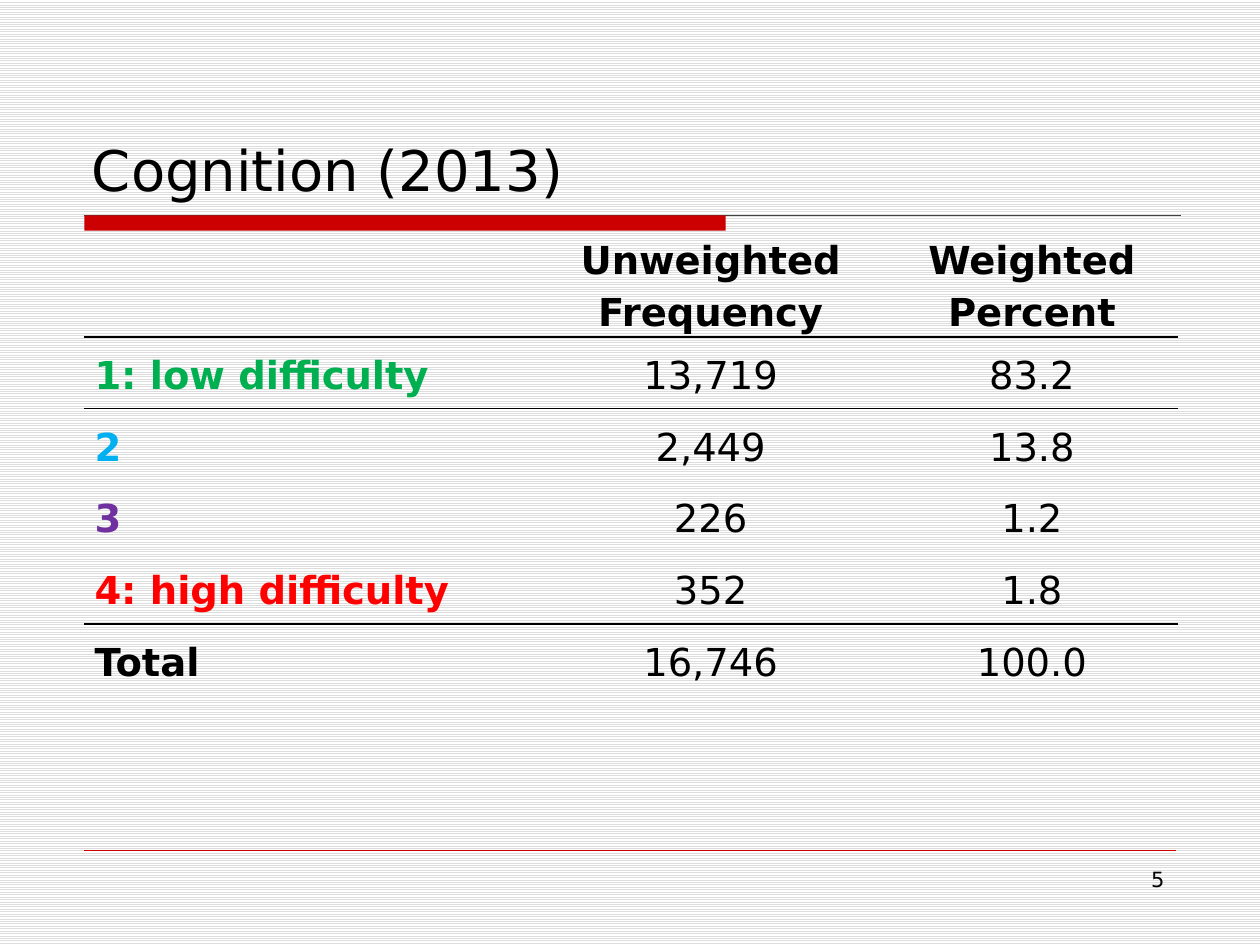
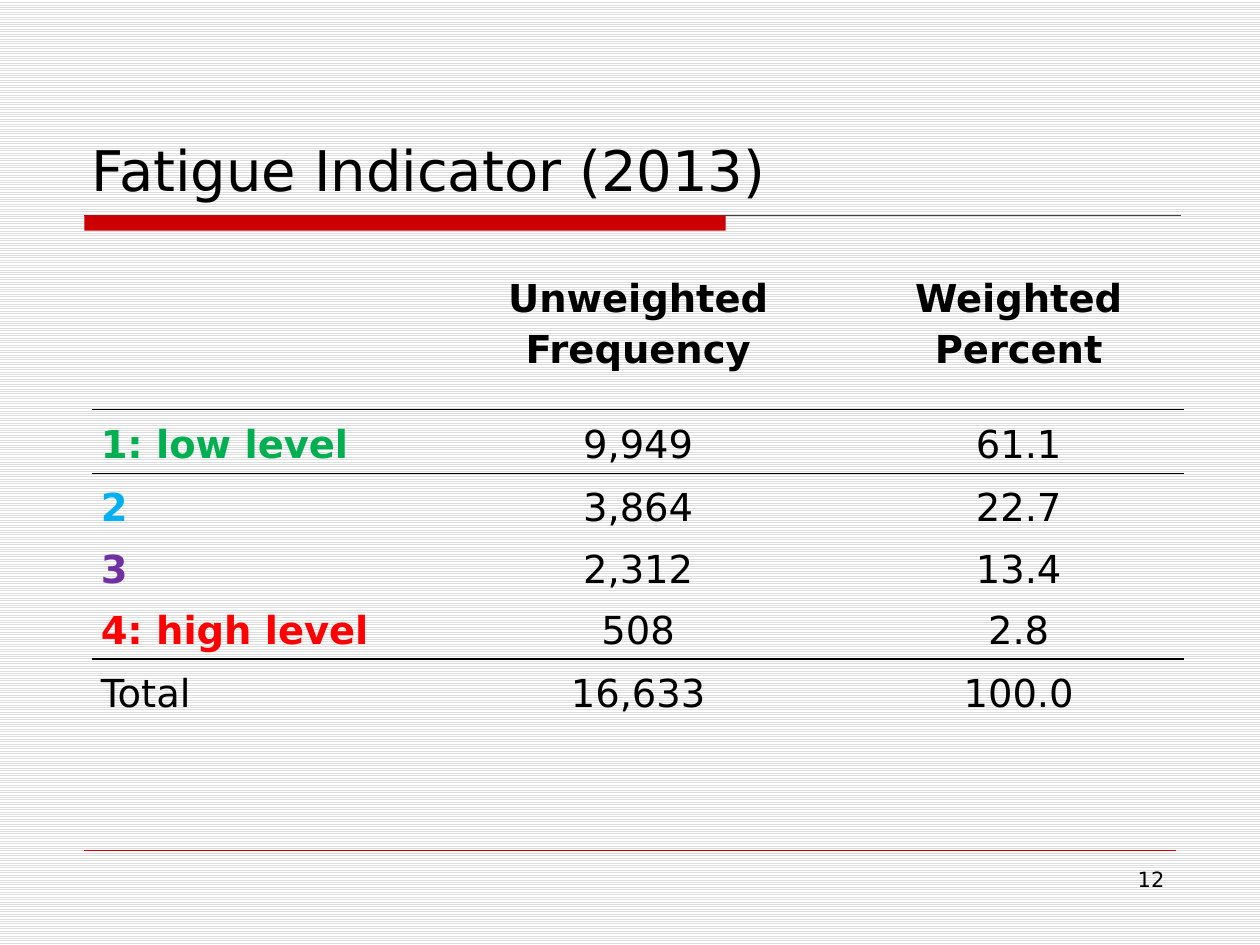
from lxml import etree
from pptx import Presentation
from pptx.dml.color import RGBColor
from pptx.enum.dml import MSO_PATTERN
from pptx.enum.shapes import MSO_CONNECTOR, MSO_SHAPE
from pptx.enum.text import MSO_ANCHOR, MSO_AUTO_SIZE, PP_ALIGN
from pptx.oxml.ns import qn
from pptx.util import Inches, Pt

BLACK = RGBColor(0x00, 0x00, 0x00)
WHITE = RGBColor(0xFF, 0xFF, 0xFF)
STRIPE_GRAY = RGBColor(0xDD, 0xDD, 0xDD)
RULE_GRAY = RGBColor(0x40, 0x40, 0x40)
RED = RGBColor(0xCC, 0x00, 0x00)
LEVEL_COLORS = [
    RGBColor(0x00, 0xB0, 0x50),
    RGBColor(0x00, 0xB0, 0xF0),
    RGBColor(0x70, 0x30, 0xA0),
    RGBColor(0xFF, 0x00, 0x00),
]
FONT = "DejaVu Sans"
NO_GRID_STYLE = "{2D5ABB26-0587-4C30-8999-92F81FD0307C}"

SLIDES = [
    dict(
        title="Cognition (2013)", number="5", left=0.67, top=1.83, inset=0.08,
        columns=[3.58, 2.78, 2.32], heights=[0.84] + [0.57] * 5, bold_total=True,
        rows=[
            ("", "Unweighted\nFrequency", "Weighted Percent"),
            ("1: low difficulty", "13,719", "83.2"),
            ("2", "2,449", "13.8"),
            ("3", "226", "1.2"),
            ("4: high difficulty", "352", "1.8"),
            ("Total", "16,746", "100.0"),
        ],
    ),
    dict(
        title="Fatigue Indicator (2013)", number="12", left=0.73, top=1.85, inset=0.07,
        columns=[2.63, 3.41, 2.63], heights=[1.4, 0.51, 0.49, 0.49, 0.49, 0.51],
        bold_total=False,
        rows=[
            ("", "Unweighted\nFrequency", "Weighted\nPercent"),
            ("1: low level", "9,949", "61.1"),
            ("2", "3,864", "22.7"),
            ("3", "2,312", "13.4"),
            ("4: high level", "508", "2.8"),
            ("Total", "16,633", "100.0"),
        ],
    ),
]


def style_text(frame, size, align, color=BLACK, bold=False, spacing=None):
    for paragraph in frame.paragraphs:
        paragraph.alignment = align
        paragraph.line_spacing = spacing
        for run in paragraph.runs:
            run.font.name = FONT
            run.font.size = Pt(size)
            run.font.bold = bold
            run.font.color.rgb = color


def add_rule(slide, left, right, y, color, width):
    rule = slide.shapes.add_connector(
        MSO_CONNECTOR.STRAIGHT, Inches(left), Inches(y), Inches(right), Inches(y))
    rule.line.color.rgb = color
    rule.line.width = Pt(width)
    etree.SubElement(rule._element.spPr, qn("a:effectLst"))


prs = Presentation()
prs.slide_width, prs.slide_height = Inches(10), Inches(7.5)

# Striped background shared by all slides
stripes = prs.slide_master.background.fill
stripes.patterned()
stripes.pattern = MSO_PATTERN.LIGHT_HORIZONTAL
stripes.fore_color.rgb = STRIPE_GRAY
stripes.back_color.rgb = WHITE

for content in SLIDES:
    slide = prs.slides.add_slide(prs.slide_layouts[5])

    # Title band and footer rule
    add_rule(slide, 0.67, 9.37, 1.71, RULE_GRAY, 0.75)
    band = slide.shapes.add_shape(
        MSO_SHAPE.RECTANGLE, Inches(0.67), Inches(1.71), Inches(5.09), Inches(0.12))
    band.shadow.inherit = False
    band.fill.solid()
    band.fill.fore_color.rgb = RED
    band.line.fill.background()
    add_rule(slide, 0.67, 9.33, 6.75, RED, 0.25)

    # Title
    title = slide.shapes.title
    title.left, title.top = Inches(0.63), Inches(0.33)
    title.width, title.height = Inches(8.75), Inches(1.33)
    title.text_frame.text = content["title"]
    title.text_frame.vertical_anchor = MSO_ANCHOR.BOTTOM
    title.text_frame.auto_size = MSO_AUTO_SIZE.NONE
    style_text(title.text_frame, 32, PP_ALIGN.LEFT)

    # Page number
    page_number = slide.shapes.add_textbox(
        Inches(7.17), Inches(6.83), Inches(2.17), Inches(0.52)).text_frame
    page_number.word_wrap = True
    page_number.text = content["number"]
    style_text(page_number, 12, PP_ALIGN.RIGHT)

    # Frequency table
    rows, columns, heights = content["rows"], content["columns"], content["heights"]
    table_frame = slide.shapes.add_table(
        len(rows), len(columns), Inches(content["left"]), Inches(content["top"]),
        Inches(sum(columns)), Inches(sum(heights)))
    frequencies = table_frame.table
    frequencies.first_row = frequencies.horz_banding = False
    next(table_frame._element.iter(qn("a:tableStyleId"))).text = NO_GRID_STYLE
    for column, width in zip(frequencies.columns, columns):
        column.width = Inches(width)

    total_row = len(rows) - 1
    row_colors = [BLACK, *LEVEL_COLORS, BLACK]
    for r, row in enumerate(rows):
        frequencies.rows[r].height = Inches(heights[r])
        for c, text in enumerate(row):
            cell = frequencies.cell(r, c)
            cell.text_frame.text = text
            cell.vertical_anchor = MSO_ANCHOR.MIDDLE
            cell.margin_left = cell.margin_right = Inches(content["inset"])
            cell.margin_top = cell.margin_bottom = 0
            cell.fill.background()
            is_label = c == 0
            bold = r == 0 or (is_label and (r < total_row or content["bold_total"]))
            style_text(
                cell.text_frame, 22, PP_ALIGN.LEFT if is_label else PP_ALIGN.CENTER,
                row_colors[r] if is_label else BLACK, bold, 1.15)

            # Lines under the header and above the total
            edge = {0: "a:lnB", 1: "a:lnT", total_row - 1: "a:lnB", total_row: "a:lnT"}.get(r)
            if edge:
                border = etree.Element(qn(edge), w=str(Pt(1)))
                line_fill = etree.SubElement(border, qn("a:solidFill"))
                etree.SubElement(line_fill, qn("a:srgbClr"), val=str(BLACK))
                cell._tc.get_or_add_tcPr().insert(0, border)

prs.save("out.pptx")
